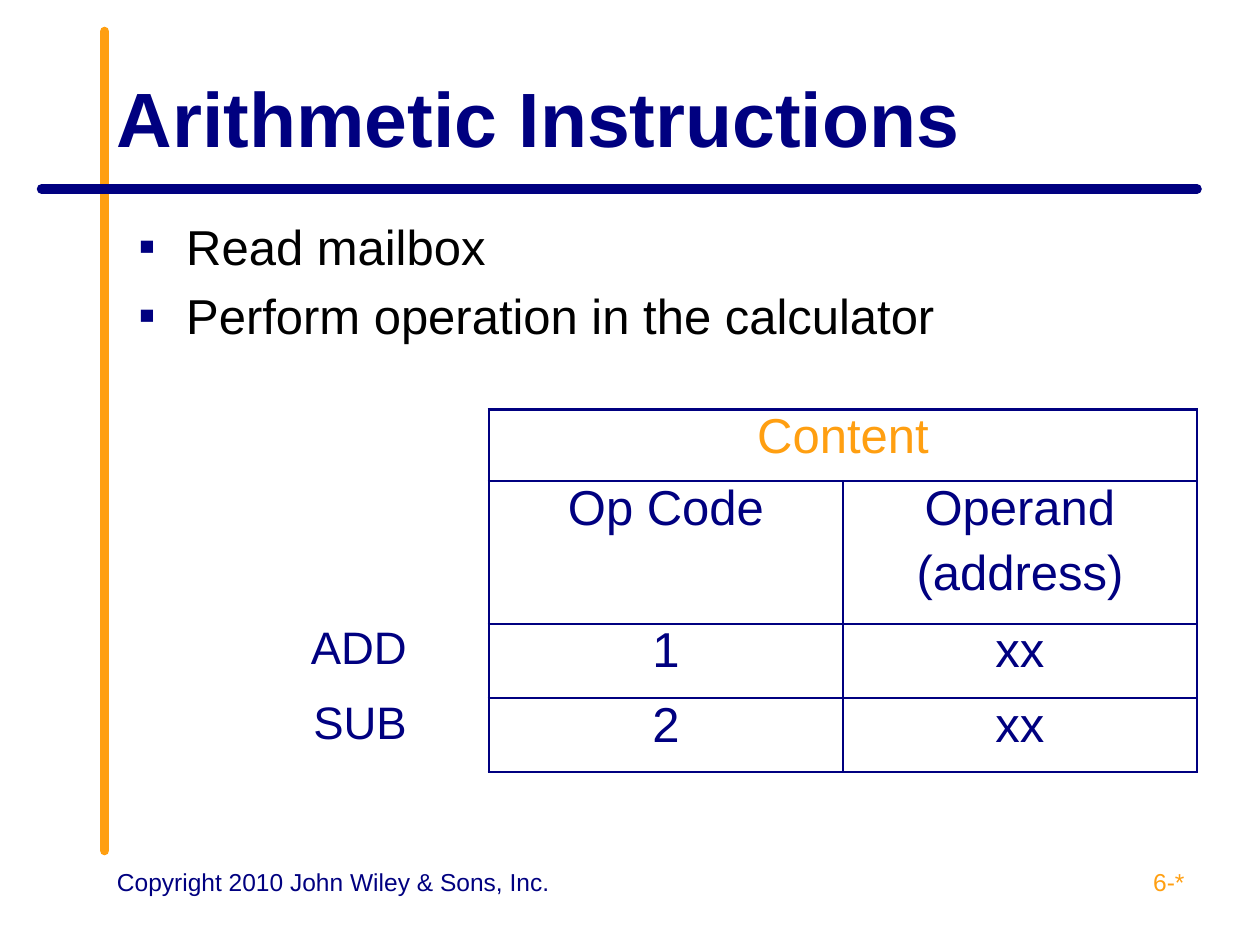
from dataclasses import dataclass

from lxml import etree
from pptx import Presentation
from pptx.dml.color import RGBColor
from pptx.enum.shapes import MSO_CONNECTOR
from pptx.enum.text import MSO_ANCHOR, PP_ALIGN
from pptx.oxml.ns import qn
from pptx.util import Inches, Pt

STRAIGHT = MSO_CONNECTOR.STRAIGHT
TOP, MIDDLE = MSO_ANCHOR.TOP, MSO_ANCHOR.MIDDLE
LEFT, CENTER, RIGHT = PP_ALIGN.LEFT, PP_ALIGN.CENTER, PP_ALIGN.RIGHT


@dataclass(frozen=True)
class Theme:
    font: str = "Arial"
    navy: str = "000080"
    orange: str = "FF9F11"
    black: str = "000000"
    white: str = "FFFFFF"
    title: float = 44
    body: float = 28
    label: float = 26
    footer: float = 14
    rule: float = 5.5
    para_gap: float = 5.6


@dataclass(frozen=True)
class Rule:
    x1: float
    y1: float
    x2: float
    y2: float
    color: str


@dataclass(frozen=True)
class TextBox:
    text: str
    left: float
    top: float
    width: float
    height: float
    size: float
    color: str
    align: PP_ALIGN = LEFT
    anchor: MSO_ANCHOR = TOP
    bold: bool = False
    bullets: bool = False


T = Theme()

RULES = [
    Rule(0.83, 6.75, 0.83, 0.25, T.orange),
    Rule(9.5, 1.5, 0.33, 1.5, T.navy),
]
TEXTS = [
    TextBox("Copyright 2010 John Wiley & Sons, Inc.", 0.83, 6.83, 3.67, 0.52,
            T.footer, T.navy),
    TextBox("6-*", 7.17, 6.83, 2.33, 0.52, T.footer, T.orange, align=RIGHT),
    TextBox("Arithmetic Instructions", 0.83, 0.3, 8.67, 1.25, T.title, T.navy,
            anchor=MIDDLE, bold=True),
    TextBox("Read mailbox\nPerform operation in the calculator",
            1, 1.67, 8.5, 1.67, T.body, T.black, bullets=True),
]

# Columns: label, gap, op code, operand
COLS = [2.23, 0.65, 2.81, 2.81]
ROWS = [0.57, 1.13, 0.59, 0.59]
CELLS = [
    ["", "", "Content", ""],
    ["", "", "Op Code", "Operand\n(address)"],
    ["ADD", "", "1", "xx"],
    ["SUB", "", "2", "xx"],
]
LABEL_COL, GAP_COL, FIRST_GRID_COL = 0, 1, 2


def style_text(tf, text: str, size: float, color: str, align: PP_ALIGN,
               bold: bool = False) -> None:
    tf.text = text
    for i, p in enumerate(tf.paragraphs):
        p.alignment = align
        if i:
            p.space_before = Pt(T.para_gap)
        for r in p.runs:
            r.font.name = T.font
            r.font.size = Pt(size)
            r.font.bold = bold
            r.font.color.rgb = RGBColor.from_string(color)


def add_bullet(p) -> None:
    pPr = p._p.get_or_add_pPr()
    pPr.set("marL", str(Inches(0.38)))
    pPr.set("indent", str(Inches(-0.38)))
    clr = etree.SubElement(pPr, qn("a:buClr"))
    etree.SubElement(clr, qn("a:srgbClr"), val=T.navy)
    etree.SubElement(pPr, qn("a:buFont"), typeface=T.font)
    etree.SubElement(pPr, qn("a:buChar"), char="▪")


def add_rule(s, rule: Rule) -> None:
    sp = s.shapes.add_connector(STRAIGHT, Inches(rule.x1), Inches(rule.y1),
                                Inches(rule.x2), Inches(rule.y2))
    sp.line.color.rgb = RGBColor.from_string(rule.color)
    sp.line.width = Pt(T.rule)
    spPr = sp._element.spPr
    spPr.find(qn("a:ln")).set("cap", "rnd")
    etree.SubElement(spPr, qn("a:effectLst"))


def add_text(s, box: TextBox) -> None:
    sp = s.shapes.add_textbox(Inches(box.left), Inches(box.top),
                              Inches(box.width), Inches(box.height))
    tf = sp.text_frame
    tf.word_wrap = True
    tf.vertical_anchor = box.anchor
    style_text(tf, box.text, box.size, box.color, box.align, box.bold)
    if box.bullets:
        for p in tf.paragraphs:
            add_bullet(p)


def set_borders(cell, col: int) -> None:
    tcPr = cell._tc.get_or_add_tcPr()
    for i, side in enumerate("LRTB"):
        navy = col >= FIRST_GRID_COL or (col == GAP_COL and side == "R")
        ln = etree.Element(qn(f"a:ln{side}"), w=str(Pt(1.5 if navy else 1)))
        fill = etree.SubElement(ln, qn("a:solidFill"))
        etree.SubElement(fill, qn("a:srgbClr"), val=T.navy if navy else T.white)
        tcPr.insert(i, ln)


def add_instruction_table(s) -> None:
    frame = s.shapes.add_table(len(ROWS), len(COLS), Inches(1), Inches(3.25),
                               Inches(sum(COLS)), Inches(sum(ROWS)))
    table = frame.table
    table.first_row = table.horz_banding = False
    for column, width in zip(table.columns, COLS):
        column.width = Inches(width)
    for row, height in zip(table.rows, ROWS):
        row.height = Inches(height)
    table.cell(0, FIRST_GRID_COL).merge(table.cell(0, len(COLS) - 1))

    for i, texts in enumerate(CELLS):
        for j, text in enumerate(texts):
            cell = table.cell(i, j)
            cell.fill.background()
            set_borders(cell, j)
            if not text:
                continue
            cell.margin_left = cell.margin_right = 0
            cell.margin_top = cell.margin_bottom = 0
            is_label = j == LABEL_COL
            style_text(cell.text_frame, text,
                       T.label if is_label else T.body,
                       T.orange if i == 0 else T.navy,
                       RIGHT if is_label else CENTER)


def main() -> None:
    prs = Presentation()
    prs.slide_width, prs.slide_height = Inches(10), Inches(7.5)
    s = prs.slides.add_slide(prs.slide_layouts[6])

    # Crossed rules behind the text
    for rule in RULES:
        add_rule(s, rule)
    # Footer, title and bullets
    for box in TEXTS:
        add_text(s, box)
    # Op codes and operands
    add_instruction_table(s)

    prs.save("out.pptx")


if __name__ == "__main__":
    main()
